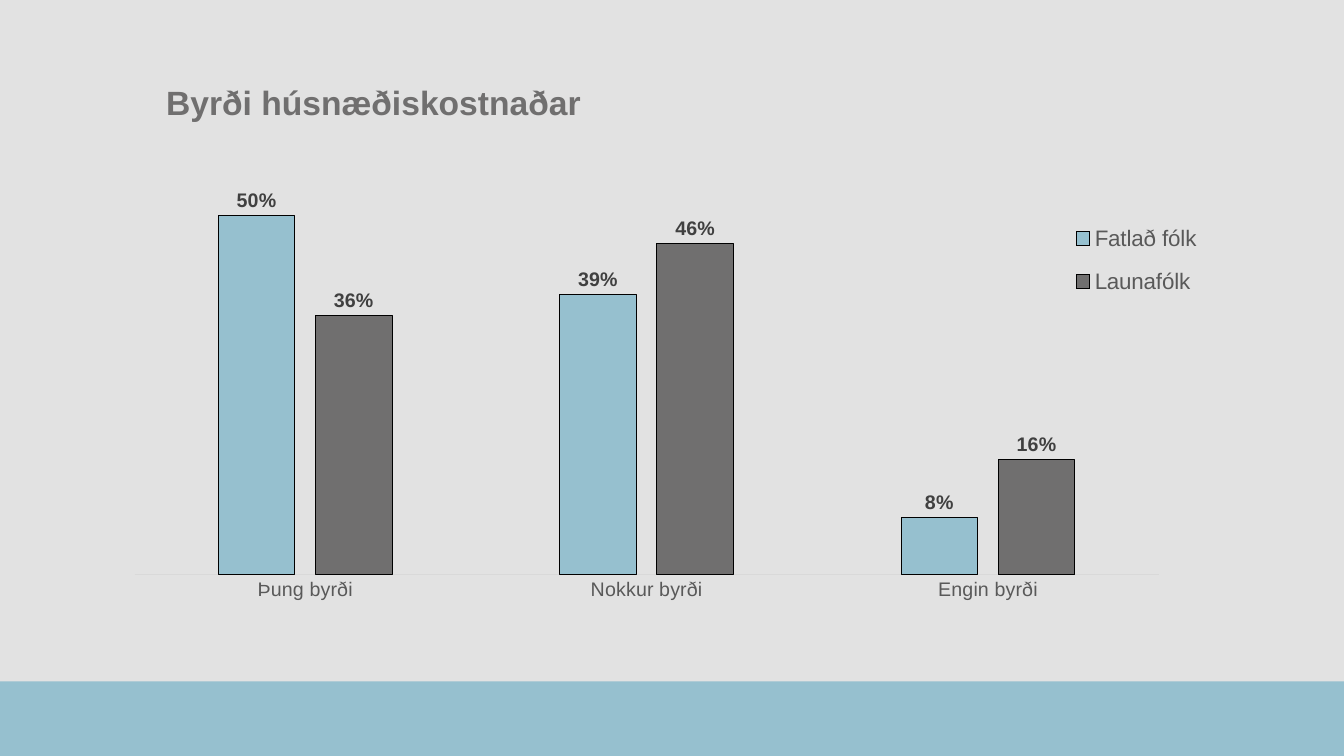
"""Build the housing cost burden slide."""
from dataclasses import dataclass

import lxml.etree
import pptx
import pptx.chart.data
import pptx.dml.color
import pptx.enum.chart
import pptx.enum.shapes
import pptx.enum.text
import pptx.oxml
import pptx.oxml.ns
import pptx.util

Inches = pptx.util.Inches


@dataclass
class Theme:
    """Colours, font and type sizes."""
    font: str = "Arial"
    background: str = "E2E2E2"
    blue: str = "96C0CF"
    grey: str = "706F6F"
    axis_text: str = "595959"
    label_text: str = "404040"
    axis_line: str = "D9D9D9"
    outline: str = "000000"
    title_size: int = 24
    legend_size: int = 16
    label_size: int = 14
    base_size: int = 10
    line_width: float = 0.75


class SlideBuilder:
    """Hold the theme and the current slide."""

    def __init__(self, page, theme):
        """Keep the slide and theme and paint the background."""
        self.page = page
        self.theme = theme
        self.paint(page.background.fill, theme.background)

    def paint(self, fill, colour):
        """Make a fill solid."""
        fill.solid()
        fill.fore_color.rgb = pptx.dml.color.RGBColor.from_string(colour)

    def stroke(self, line, colour):
        """Give a line the theme width and a colour."""
        self.paint(line.fill, colour)
        line.width = pptx.util.Pt(self.theme.line_width)

    def style(self, font, size, colour, bold=False):
        """Set the face, size, colour and weight of a font."""
        font.name = self.theme.font
        font.size = pptx.util.Pt(size)
        font.bold = bold
        font.color.rgb = pptx.dml.color.RGBColor.from_string(colour)

    def band(self, left, top, width, height, colour):
        """Add a plain rectangle."""
        shape = self.page.shapes.add_shape(
            pptx.enum.shapes.MSO_SHAPE.RECTANGLE,
            Inches(left), Inches(top), Inches(width), Inches(height))
        shape.shadow.inherit = False
        self.paint(shape.fill, colour)
        shape.line.fill.background()

    def title(self, text, left, top, width, height):
        """Add the heading."""
        box = self.page.shapes.add_textbox(
            Inches(left), Inches(top), Inches(width), Inches(height))
        frame = box.text_frame
        frame.word_wrap = True
        frame.vertical_anchor = pptx.enum.text.MSO_ANCHOR.MIDDLE
        frame.text = text
        para = frame.paragraphs[0]
        para.line_spacing = 0.9
        self.style(para.runs[0].font, self.theme.title_size, self.theme.grey, True)

    def place(self, parent, index, x, y, w, h, inner=False):
        """Set the manual layout of a chart element as fractions of the chart."""
        for old in parent.findall(pptx.oxml.ns.qn("c:layout")):
            parent.remove(old)
        layout = pptx.oxml.parse_xml(
            f'<c:layout {pptx.oxml.ns.nsdecls("c")}><c:manualLayout/></c:layout>')
        settings = [("xMode", "edge"), ("yMode", "edge"),
                    ("x", x), ("y", y), ("w", w), ("h", h)]
        if inner:
            settings.insert(0, ("layoutTarget", "inner"))
        for tag, value in settings:
            lxml.etree.SubElement(
                layout[0], pptx.oxml.ns.qn(f"c:{tag}")).set("val", str(value))
        parent.insert(index, layout)

    def column_chart(self, categories, series, left, top, width, height):
        """Add a clustered column chart from (name, values, colour) series."""
        theme = self.theme
        enum = pptx.enum.chart
        data = pptx.chart.data.CategoryChartData(number_format="0%")
        data.categories = categories
        for name, values, _ in series:
            data.add_series(name, values)
        chart = self.page.shapes.add_chart(
            enum.XL_CHART_TYPE.COLUMN_CLUSTERED,
            Inches(left), Inches(top), Inches(width), Inches(height), data).chart
        self.style(chart.font, theme.base_size, theme.outline)
        chart.has_title = False

        axis = chart.category_axis
        axis.major_tick_mark = enum.XL_TICK_MARK.NONE
        self.stroke(axis.format.line, theme.axis_line)
        self.style(axis.tick_labels.font, theme.label_size, theme.axis_text)
        chart.value_axis.minimum_scale = 0
        chart.value_axis.maximum_scale = 0.6
        chart.value_axis.has_major_gridlines = False
        chart.value_axis.visible = False

        plot = chart.plots[0]
        plot.vary_by_categories = False
        plot.gap_width = 219
        plot.overlap = -27
        for bars, (_, _, colour) in zip(plot.series, series):
            self.paint(bars.format.fill, colour)
            self.stroke(bars.format.line, theme.outline)
            labels = bars.data_labels
            labels.show_value = True
            labels.number_format = "0%"
            labels.number_format_is_linked = False
            labels.position = enum.XL_LABEL_POSITION.OUTSIDE_END
            self.style(labels.font, theme.label_size, theme.label_text, True)

        chart.has_legend = True
        chart.legend.position = enum.XL_LEGEND_POSITION.BOTTOM
        chart.legend.include_in_layout = False
        self.style(chart.legend.font, theme.legend_size, theme.axis_text)
        root = chart.element
        self.place(root.find(".//" + pptx.oxml.ns.qn("c:plotArea")), 0,
                   0.014, 0.029, 0.921, 0.817, inner=True)
        self.place(root.find(".//" + pptx.oxml.ns.qn("c:legend")), 1,
                   0.85, 0.15, 0.13, 0.2)


def main():
    """Create the deck and save it."""
    deck = pptx.Presentation()
    deck.slide_width = Inches(13.33)
    deck.slide_height = Inches(7.5)
    theme = Theme()
    builder = SlideBuilder(deck.slides.add_slide(deck.slide_layouts[6]), theme)
    builder.band(0, 6.76, 13.33, 0.74, theme.blue)
    builder.title("Byrði húsnæðiskostnaðar", 1.55, 0.7, 10.24, 0.68)
    builder.column_chart(
        ["Þung byrði", "Nokkur byrði", "Engin byrði"],
        [("Fatlað fólk", [0.5, 0.39, 0.08], theme.blue),
         ("Launafólk", [0.36, 0.46, 0.16], theme.grey)],
        1.18, 1.27, 11.03, 5.24)
    deck.save("out.pptx")


if __name__ == "__main__":
    main()
